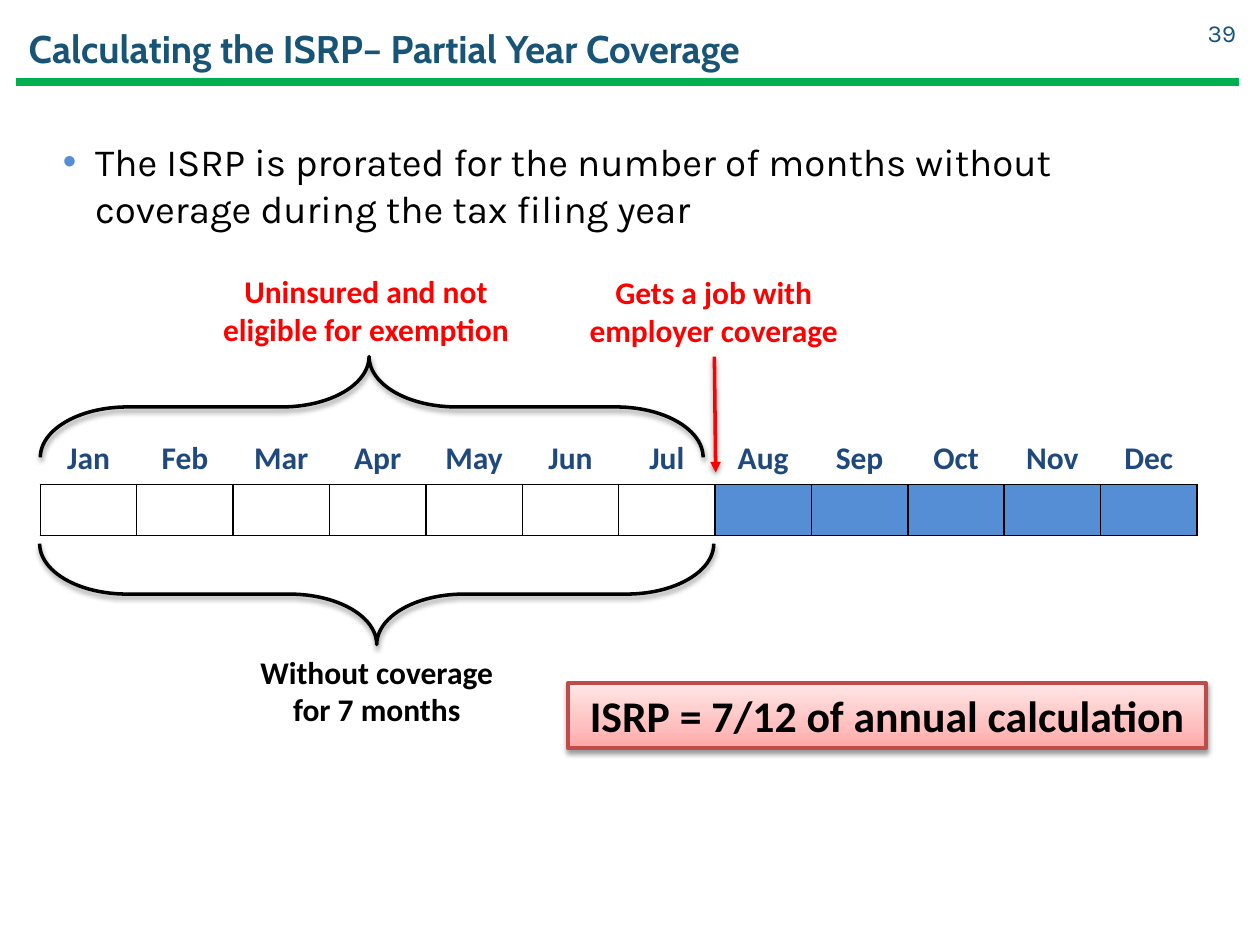
from copy import deepcopy

from lxml import etree
from pptx import Presentation
from pptx.dml.color import RGBColor
from pptx.enum import shapes, text
from pptx.oxml import parse_xml
from pptx.oxml.ns import nsdecls, qn
from pptx.util import Inches, Pt

NAVY, BLUE, GREEN, RED, BLACK, WHITE = "175475", "558ED5", "00B050", "FF0000", "000000", "FFFFFF"
LEFT, CENTER, RIGHT = text.PP_ALIGN.LEFT, text.PP_ALIGN.CENTER, text.PP_ALIGN.RIGHT
TOP, MIDDLE = text.MSO_ANCHOR.TOP, text.MSO_ANCHOR.MIDDLE

MONTHS = ["Jan", "Feb", "Mar", "Apr", "May", "Jun", "Jul", "Aug", "Sep", "Oct", "Nov", "Dec"]
UNINSURED_MONTHS = 7
TABLE_BOX = (0.32, 3.44, 9.18, 0.81)

HEADING = {"name": "Cabin", "size": 22, "color": NAVY, "bold": True}
BODY = {"name": "Karla", "size": 22, "color": BLACK, "bold": False}
NUMBER = {**BODY, "size": 14, "color": NAVY}
NOTE = {"name": "Calibri", "size": 18, "color": BLACK, "bold": True}
RED_NOTE = {**NOTE, "color": RED}
MONTH = {**NOTE, "color": "1F497D"}
RESULT = {**NOTE, "size": 25}

# box (left, top, width, height), wording, font, alignment, anchor
TEXTS = [
    ((0.13, 0.1, 9, 0.57), "Calculating the ISRP– Partial Year Coverage", HEADING, LEFT, MIDDLE),
    ((9.4, 0.06, 0.51, 0.4), "39", NUMBER, RIGHT, MIDDLE),
    ((4.51, 2.12, 2.31, 0.71), "Gets a job with employer coverage", RED_NOTE, CENTER, TOP),
    ((1.63, 2.11, 2.55, 0.71), "Uninsured and not eligible for exemption", RED_NOTE, CENTER, TOP),
    ((1.85, 5.13, 2.28, 0.71), "Without coverage for 7 months", NOTE, CENTER, TOP),
]
BULLET = ((0.4, 1.05, 9, 5.32),
          "The ISRP is prorated for the number of months without coverage during the tax filing year")
BULLET_INDENT = Pt(18.5)
RESULT_BOX = ((4.51, 5.42, 5.06, 0.52), "ISRP = 7/12 of annual calculation")
RESULT_STOPS = [(0, "FFA6A5"), (0.35, "FFC0BF"), (1, "FFE7E7")]

# unrotated box, rotation, position of the point along the brace
BRACES = [((2.59, 2.04, 0.8, 5.35), 270, 0.5), ((2.55, 0.6, 0.8, 5.26), 90, 0.504)]


def rgb(color):
    return RGBColor.from_string(color)


def inches(values):
    return [Inches(value) for value in values]


def write(frame, wording, font, align, anchor=TOP):
    frame.word_wrap = True
    frame.vertical_anchor = anchor
    paragraph = frame.paragraphs[0]
    paragraph.alignment = align
    run = paragraph.add_run()
    run.text = wording
    values = {"name": font["name"], "size": Pt(font["size"]), "bold": font["bold"]}
    for name, value in values.items():
        setattr(run.font, name, value)
    run.font.color.rgb = rgb(font["color"])
    return paragraph


def add_text(slide, box, *content):
    return write(slide.shapes.add_textbox(*inches(box)).text_frame, *content)


def set_line(shape, color, width):
    shape.line.color.rgb = rgb(color)
    shape.line.width = Pt(width)


def set_effects(shape, shadow):
    """Give the shape a soft drop shadow, or an empty effect list."""
    properties = shape._element.spPr
    for old in properties.findall(qn("a:effectLst")):
        properties.remove(old)
    effects = etree.SubElement(properties, qn("a:effectLst"))
    if shadow:
        outer = etree.SubElement(effects, qn("a:outerShdw"), blurRad=str(Pt(3.1)),
                                 dist=str(Pt(1.6)), dir="5400000", rotWithShape="0")
        color = etree.SubElement(outer, qn("a:srgbClr"), val=BLACK)
        etree.SubElement(color, qn("a:alpha"), val="38000")


def add_line(slide, ends, color, width, arrow=False):
    line = slide.shapes.add_connector(shapes.MSO_CONNECTOR.STRAIGHT, *inches(ends))
    set_line(line, color, width)
    if arrow:
        etree.SubElement(line.line._get_or_add_ln(), qn("a:tailEnd"), type="triangle")
    set_effects(line, shadow=arrow)


def add_bullet(slide, box, wording):
    paragraph = add_text(slide, box, wording, BODY, LEFT)
    paragraph.space_before = Pt(0.2 * BODY["size"])
    properties = paragraph._p.get_or_add_pPr()
    properties.set("marL", str(BULLET_INDENT))
    properties.set("indent", str(-BULLET_INDENT))
    color = etree.SubElement(properties, qn("a:buClr"))
    etree.SubElement(color, qn("a:srgbClr"), val=BLUE)
    etree.SubElement(properties, qn("a:buFont"), typeface="Arial")
    etree.SubElement(properties, qn("a:buChar"), char="•")


def set_borders(cell, colors):
    """Draw 1 pt borders, with colors for left, right, top and bottom."""
    properties = cell._tc.get_or_add_tcPr()
    for index, (side, color) in enumerate(zip("LRTB", colors)):
        properties.insert(index, parse_xml(
            f'<a:ln{side} {nsdecls("a")} w="{Pt(1)}"><a:solidFill>'
            f'<a:srgbClr val="{color}"/></a:solidFill></a:ln{side}>'))


def add_calendar(slide, names, filled_from):
    """Add a row of names over a row of blocks, filled from one column on."""
    table = slide.shapes.add_table(2, len(MONTHS), *inches(TABLE_BOX)).table
    table.first_row = table.horz_banding = False
    for column in range(len(MONTHS)):
        heading, block = table.cell(0, column), table.cell(1, column)
        if names:
            write(heading.text_frame, names[column], MONTH, CENTER)
        heading.fill.background()
        if column < filled_from:
            block.fill.background()
        else:
            block.fill.solid()
            block.fill.fore_color.rgb = rgb(BLUE)
        set_borders(heading, [WHITE, WHITE, WHITE, BLACK])
        set_borders(block, [BLACK] * 4)


def add_brace(slide, box, rotation, point):
    brace = slide.shapes.add_shape(shapes.MSO_SHAPE.LEFT_BRACE, *inches(box))
    brace.rotation = rotation
    brace.adjustments[0] = 0.865
    brace.adjustments[1] = point
    brace.fill.background()
    set_line(brace, BLACK, 2)
    set_effects(brace, shadow=True)


def add_result(slide, box, wording):
    result = slide.shapes.add_shape(shapes.MSO_SHAPE.RECTANGLE, *inches(box))
    result.fill.gradient()
    result.fill.gradient_angle = 90
    stop_list = result._element.spPr.find(".//" + qn("a:gsLst"))
    stop_list.append(deepcopy(stop_list[-1]))
    for stop, (position, color) in zip(result.fill.gradient_stops, RESULT_STOPS):
        stop.position = position
        stop.color.rgb = rgb(color)
    set_line(result, "BF4C48", 2.25)
    set_effects(result, shadow=True)
    write(result.text_frame, wording, RESULT, CENTER)


def main():
    presentation = Presentation()
    presentation.slide_width, presentation.slide_height = inches((10, 7.5))
    slide = presentation.slides.add_slide(presentation.slide_layouts[6])
    add_line(slide, (0.13, 0.65, 9.83, 0.65), GREEN, 4.75)
    add_bullet(slide, *BULLET)
    add_calendar(slide, MONTHS, filled_from=len(MONTHS))
    add_calendar(slide, [], filled_from=UNINSURED_MONTHS)
    add_line(slide, (5.67, 2.83, 5.68, 3.75), RED, 2, arrow=True)
    for entry in TEXTS:
        add_text(slide, *entry)
    for brace in BRACES:
        add_brace(slide, *brace)
    add_result(slide, *RESULT_BOX)
    presentation.save("out.pptx")


if __name__ == "__main__":
    main()
